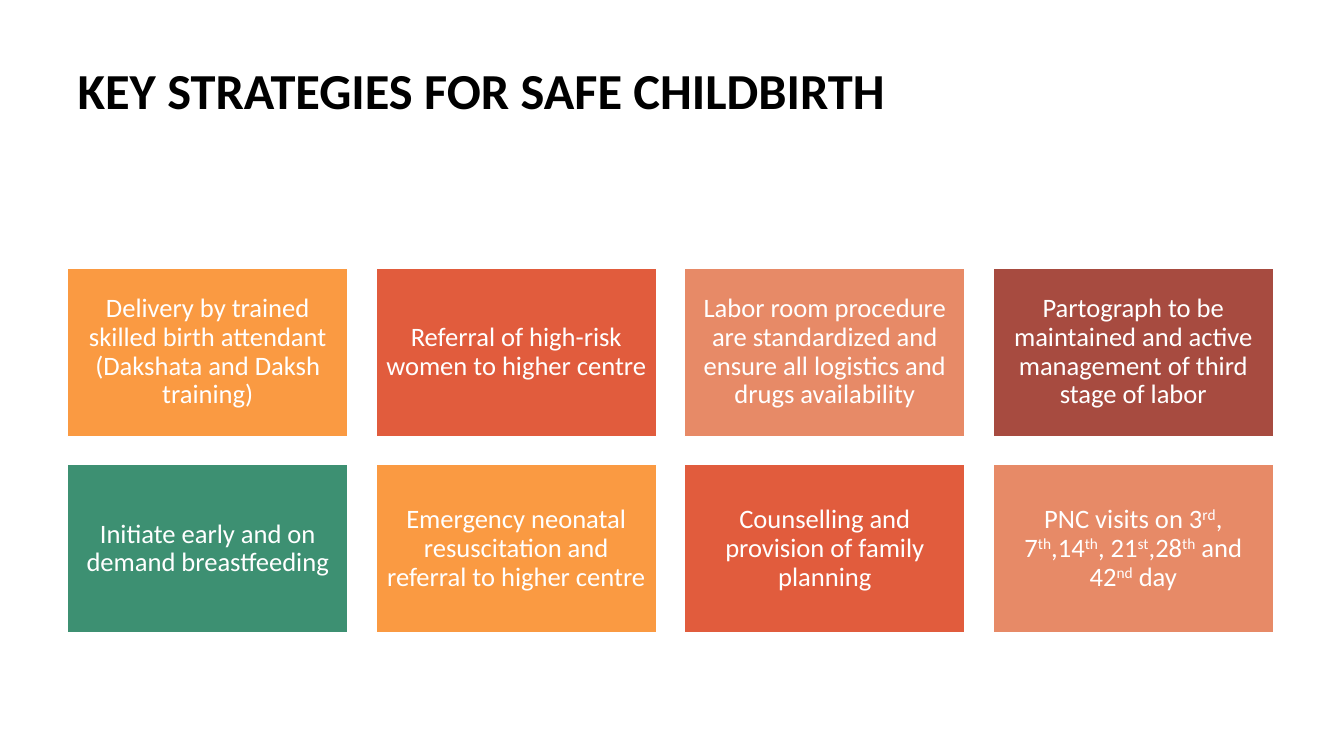
from dataclasses import dataclass

from pptx import Presentation
from pptx.dml.color import RGBColor
from pptx.enum import shapes, text
from pptx.util import Inches, Pt


@dataclass(frozen=True)
class Theme:
    font: str = "Calibri"
    head: float = 36
    body: float = 19
    ink: str = "000000"
    white: str = "FFFFFF"
    amber: str = "FA9A42"
    red: str = "E15C3D"
    coral: str = "E78A67"
    brick: str = "A74B40"
    green: str = "3D9072"


@dataclass(frozen=True)
class Card:
    words: str
    fill: str


THEME = Theme()
COLS = 4
LEFT, TOP = 0.67, 2.66
WIDE, HIGH = 2.78, 1.67
STEP_X, STEP_Y = 3.06, 1.95
INSET = 0.08
RAISE = "^"

CARDS = [
    Card("Delivery by trained skilled birth attendant (Dakshata and Daksh training)", THEME.amber),
    Card("Referral of high-risk women to higher centre", THEME.red),
    Card("Labor room procedure are standardized and ensure all logistics and drugs availability", THEME.coral),
    Card("Partograph to be maintained and active management of third stage of labor", THEME.brick),
    Card("Initiate early and on demand breastfeeding", THEME.green),
    Card("Emergency neonatal resuscitation and referral to higher centre", THEME.amber),
    Card("Counselling and provision of family planning", THEME.red),
    Card("PNC visits on 3^rd^, 7^th^,14^th^, 21^st^,28^th^ and 42^nd^ day", THEME.coral),
]


def style(para, size: float, color: str, bold: bool = False) -> None:
    para.line_spacing = 0.9
    font = para.font
    font.name, font.size, font.bold = THEME.font, Pt(size), bold
    font.color.rgb = RGBColor.from_string(color)


def add_title(slide, words: str) -> None:
    title = slide.shapes.title
    title.left, title.top = Inches(LEFT), Inches(0.6)
    title.width, title.height = Inches(11.97), Inches(1.24)
    frame = title.text_frame
    frame.text = words
    frame.vertical_anchor = text.MSO_ANCHOR.TOP
    para = frame.paragraphs[0]
    para.alignment = text.PP_ALIGN.LEFT
    style(para, THEME.head, THEME.ink, True)


def add_card(slide, card: Card, row: int, col: int) -> None:
    box = slide.shapes.add_shape(
        shapes.MSO_SHAPE.RECTANGLE,
        Inches(LEFT + col * STEP_X), Inches(TOP + row * STEP_Y),
        Inches(WIDE), Inches(HIGH))
    box.shadow.inherit = False
    box.fill.solid()
    box.fill.fore_color.rgb = RGBColor.from_string(card.fill)
    box.line.color.rgb = RGBColor.from_string(THEME.white)
    box.line.width = Pt(1)
    frame = box.text_frame
    frame.word_wrap = True
    frame.vertical_anchor = text.MSO_ANCHOR.MIDDLE
    frame.margin_left = frame.margin_right = Inches(INSET)
    frame.margin_top = frame.margin_bottom = Inches(INSET)
    para = frame.paragraphs[0]
    para.alignment = text.PP_ALIGN.CENTER
    style(para, THEME.body, THEME.white)
    for i, part in enumerate(card.words.split(RAISE)):
        run = para.add_run()
        run.text = part
        if i % 2:
            run.font._element.set("baseline", "30000")


def main() -> None:
    """Build the slide on key strategies for safe childbirth."""
    deck = Presentation()
    deck.slide_width, deck.slide_height = Inches(13.33), Inches(7.5)
    slide = deck.slides.add_slide(deck.slide_layouts[5])
    add_title(slide, "KEY STRATEGIES FOR SAFE CHILDBIRTH")
    for i, card in enumerate(CARDS):
        add_card(slide, card, *divmod(i, COLS))
    deck.save("out.pptx")


if __name__ == "__main__":
    main()
